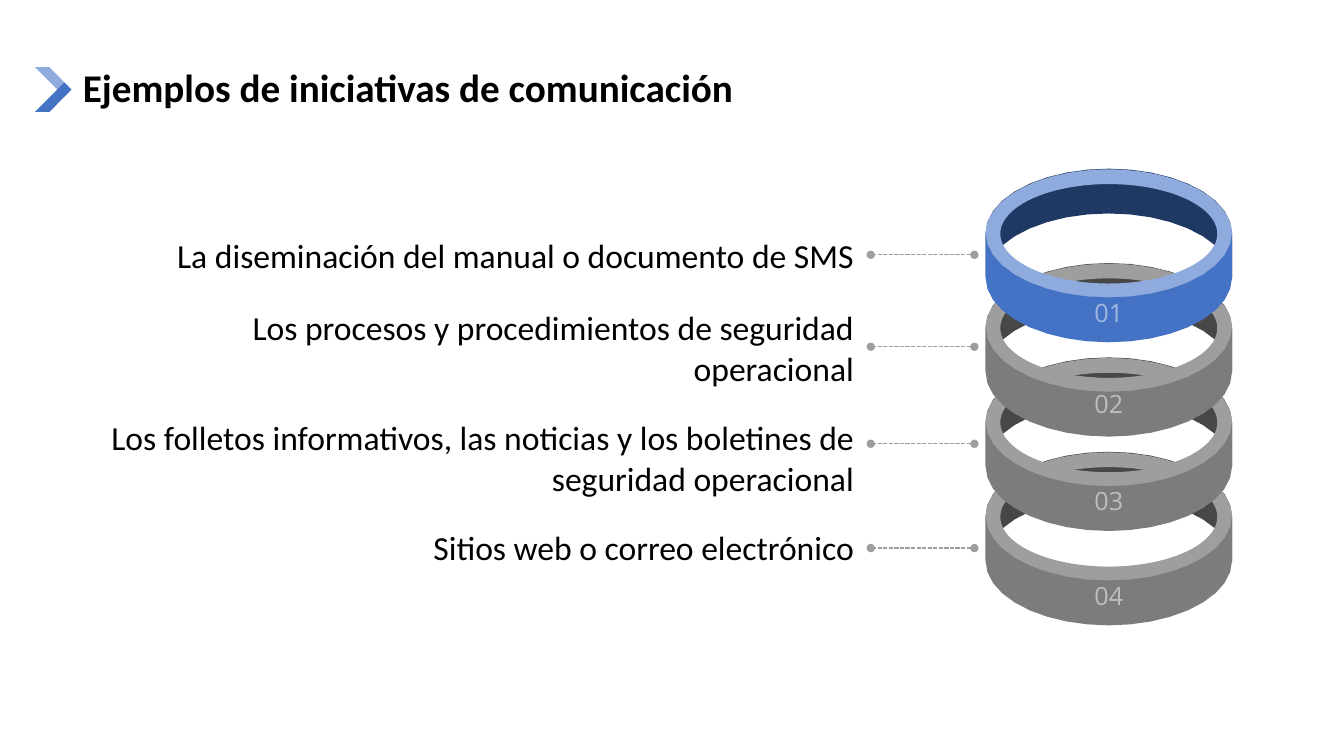
from dataclasses import dataclass
from math import cos, pi, sin

from lxml.etree import SubElement
from pptx import Presentation
from pptx.dml.color import RGBColor
from pptx.enum.dml import MSO_LINE
from pptx.enum.shapes import MSO_CONNECTOR, MSO_SHAPE
from pptx.enum.text import MSO_ANCHOR, MSO_AUTO_SIZE, PP_ALIGN
from pptx.oxml.ns import qn
from pptx.util import Pt


@dataclass(frozen=True)
class Theme:
    ink: str = "000000"
    white: str = "FFFFFF"
    pale: str = "8FAADC"
    blue: str = "4472C4"
    navy: str = "203864"
    light: str = "9E9E9E"
    gray: str = "7C7C7C"
    dark: str = "474747"
    face: str = "Calibri"
    digit: str = "Open Sans"
    title: int = 28
    label: int = 24
    number: int = 18


def arc(x, y, wide, high, start, steps=18):
    turns = [start + pi * i / steps for i in range(steps + 1)]
    return [(x + wide * cos(t), y + high * sin(t)) for t in turns]


class Page:
    def __init__(self, slide, theme):
        self.slide = slide
        self.theme = theme

    def style(self, para, size, face, color, align, bold=False):
        para.alignment = align
        font = para.font
        font.size, font.name, font.bold = Pt(size), face, bold
        font.color.rgb = RGBColor.from_string(color)

    def paint(self, shape, color):
        shape.shadow.inherit = False
        shape.fill.solid()
        shape.fill.fore_color.rgb = RGBColor.from_string(color)
        shape.line.fill.background()

    def title(self, text, left, top, width, height):
        box = self.slide.shapes.title
        box.left, box.top, box.width, box.height = map(Pt, (left, top, width, height))
        frame = box.text_frame
        frame.text = text
        frame.auto_size = MSO_AUTO_SIZE.NONE
        frame.vertical_anchor = MSO_ANCHOR.MIDDLE
        para = frame.paragraphs[0]
        para.line_spacing = 0.9
        self.style(para, self.theme.title, self.theme.face, self.theme.ink,
                   PP_ALIGN.LEFT, True)

    def form(self, color, spots):
        spots = [(Pt(x), Pt(y)) for x, y in spots]
        pen = self.slide.shapes.build_freeform(*spots[0])
        pen.add_line_segments(spots[1:], close=True)
        shape = pen.convert_to_shape()
        self.paint(shape, color)
        return shape

    def band(self, color, x, y, wide, high, depth, start):
        edge = arc(x, y, wide, high, start)
        return self.form(color, edge + [(a, b + depth) for a, b in reversed(edge)])

    def ring(self, text, y, inset, back, rim, front):
        x, wide, high, depth, thick = 792, 88, 46, 32, 10.5
        self.band(back, x, y - 0.5, wide, high, depth, pi)
        hoop = self.slide.shapes.add_shape(
            MSO_SHAPE.DONUT, Pt(x - wide), Pt(y - high), Pt(2 * wide), Pt(2 * high))
        hoop.adjustments[0] = thick / (2 * high)
        self.paint(hoop, rim)
        wall = self.band(front, x, y - 0.5, wide, high, depth, 0)
        frame = wall.text_frame
        frame.margin_left = frame.margin_right = frame.margin_bottom = 0
        frame.margin_top = Pt(inset)
        frame.vertical_anchor = MSO_ANCHOR.MIDDLE
        frame.text = text
        para = frame.paragraphs[0]
        self.style(para, self.theme.number, self.theme.digit, self.theme.white,
                   PP_ALIGN.CENTER)
        tint = para._p.find(".//" + qn("a:srgbClr"))
        SubElement(tint, qn("a:alpha"), val="50000")

    def label(self, text, top, height):
        box = self.slide.shapes.add_textbox(Pt(64), Pt(top), Pt(553), Pt(height))
        frame = box.text_frame
        frame.word_wrap = True
        frame.text = text
        self.style(frame.paragraphs[0], self.theme.label, self.theme.face,
                   self.theme.ink, PP_ALIGN.RIGHT)

    def link(self, y):
        line = self.slide.shapes.add_connector(
            MSO_CONNECTOR.STRAIGHT, Pt(696), Pt(y), Pt(622), Pt(y))
        line.line.color.rgb = RGBColor.from_string(self.theme.light)
        line.line.width = Pt(1)
        line.line.dash_style = MSO_LINE.SQUARE_DOT
        for end in ("a:headEnd", "a:tailEnd"):
            SubElement(line.line._ln, qn(end), type="oval")
        SubElement(line._element.spPr, qn("a:effectLst"))


def main():
    deck = Presentation()
    deck.slide_width, deck.slide_height = Pt(960), Pt(540)
    theme = Theme()
    page = Page(deck.slides.add_slide(deck.slide_layouts[5]), theme)
    page.title("Ejemplos de iniciativas de comunicación", 52, 29, 828, 70.5)

    mid = 64
    for color, sign in ((theme.pale, -1), (theme.blue, 1)):
        page.form(color, [(25, mid + sign * 16), (46, mid - sign * 5),
                          (51, mid), (35.3, mid + sign * 16)])

    cool = (theme.navy, theme.pale, theme.blue)
    plain = (theme.dark, theme.light, theme.gray)
    rings = [("01", 35, cool), ("02", 30, plain), ("03", 35, plain), ("04", 35, plain)]
    for i, (text, inset, colors) in reversed(list(enumerate(rings))):
        page.ring(text, 167 + 67.4 * i, inset, *colors)

    rows = [
        ("La diseminación del manual o documento de SMS", 164.5, 34.5, 182),
        ("Los procesos y procedimientos de seguridad operacional", 216, 54, 247.7),
        ("Los folletos informativos, las noticias y los boletines de seguridad operacional",
         294.5, 54, 317),
        ("Sitios web o correo electrónico", 373, 37.5, 391.5),
    ]
    for text, top, height, y in rows:
        page.label(text, top, height)
        page.link(y)
    deck.save("out.pptx")


if __name__ == "__main__":
    main()
